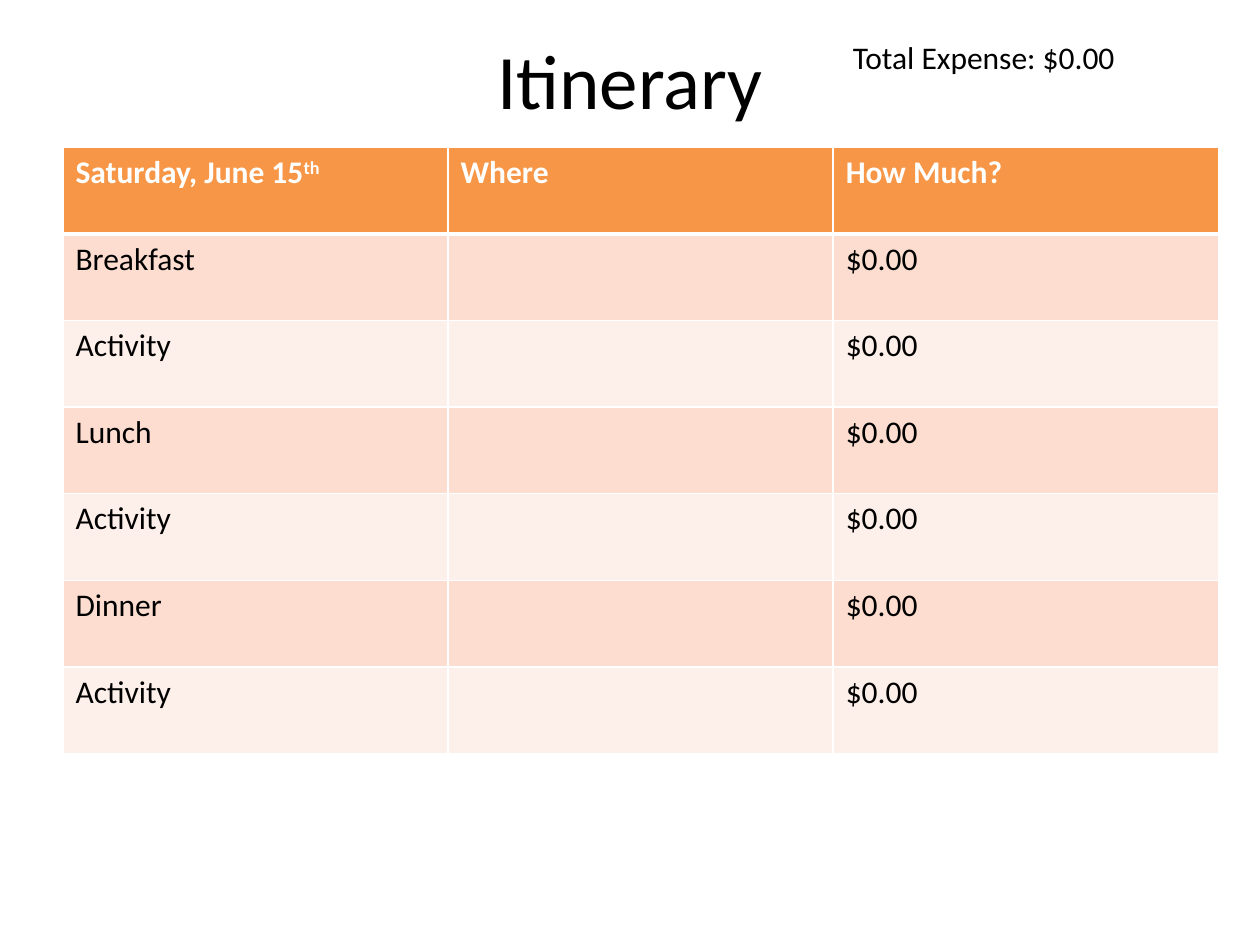
from lxml.etree import SubElement
from pptx import Presentation
from pptx.dml.color import RGBColor
from pptx.enum.text import MSO_ANCHOR as Anchor, MSO_AUTO_SIZE as AutoSize, PP_ALIGN as Align
from pptx.oxml.ns import qn
from pptx.util import Inches, Pt

WHITE, BLACK, ORANGE = "FFFFFF", "000000", "F79646"
BANDS = ("FCDDCF", "FDEFE9")
HEADINGS = (("Saturday, June 15", "th"), ("Where", ""), ("How Much?", ""))
PLANS = ("Breakfast", "Activity", "Lunch", "Activity", "Dinner", "Activity")
COST = "$0.00"


def rgb(hex_color):
    return RGBColor.from_string(hex_color)


def write(paragraph, text, size=18, color=BLACK, bold=False, superscript=False):
    run = paragraph.add_run()
    run.text = text
    run.font.name = "Calibri"
    run.font.size = Pt(size)
    run.font.bold = bold
    run.font.color.rgb = rgb(color)
    if superscript:
        run._r.get_or_add_rPr().set("baseline", "30000")


def style_cell(cell, fill, top=1, bottom=1):
    properties = cell._tc.get_or_add_tcPr()
    for side, width in (("L", 1), ("R", 1), ("T", top), ("B", bottom)):
        line = SubElement(properties, qn(f"a:ln{side}"), w=str(Pt(width)))
        solid = SubElement(line, qn("a:solidFill"))
        SubElement(solid, qn("a:srgbClr"), val=WHITE)
    cell.fill.solid()
    cell.fill.fore_color.rgb = rgb(fill)


def place_title(slide, left, top, width, height):
    title = slide.shapes.title
    title.left, title.top, title.width, title.height = left, top, width, height
    title.text_frame.vertical_anchor = Anchor.MIDDLE
    heading = title.text_frame.paragraphs[0]
    heading.alignment = Align.CENTER
    write(heading, "Itinerary", size=44)


def place_total(slide, left, top, width, height):
    total = slide.shapes.add_textbox(left, top, width, height).text_frame
    total.word_wrap = True
    total.auto_size = AutoSize.SHAPE_TO_FIT_TEXT
    write(total.paragraphs[0], f"Total Expense: {COST}")


def place_schedule(slide, left, top, width, height):
    schedule = slide.shapes.add_table(
        len(PLANS) + 1, len(HEADINGS), left, top, width, height).table
    for column, (heading, suffix) in enumerate(HEADINGS):
        cell = schedule.cell(0, column)
        style_cell(cell, ORANGE, bottom=3)
        paragraph = cell.text_frame.paragraphs[0]
        write(paragraph, heading, color=WHITE, bold=True)
        if suffix:
            write(paragraph, suffix, color=WHITE, bold=True, superscript=True)
    for row, plan in enumerate(PLANS, start=1):
        for column, entry in enumerate((plan, "", COST)):
            cell = schedule.cell(row, column)
            style_cell(cell, BANDS[(row - 1) % 2], top=3 if row == 1 else 1)
            if entry:
                write(cell.text_frame.paragraphs[0], entry)


def main():
    deck = Presentation()
    deck.slide_width, deck.slide_height = Inches(10), Inches(7.5)
    slide = deck.slides.add_slide(deck.slide_layouts[5])
    place_title(slide, Inches(0.5), Inches(0), Inches(9), Inches(1.25))
    place_total(slide, Inches(6.67), Inches(0.25), Inches(3.08), Inches(0.4))
    place_schedule(slide, Inches(0.5), Inches(1.17), Inches(9.17), Inches(4.81))
    deck.save("out.pptx")


if __name__ == "__main__":
    main()
